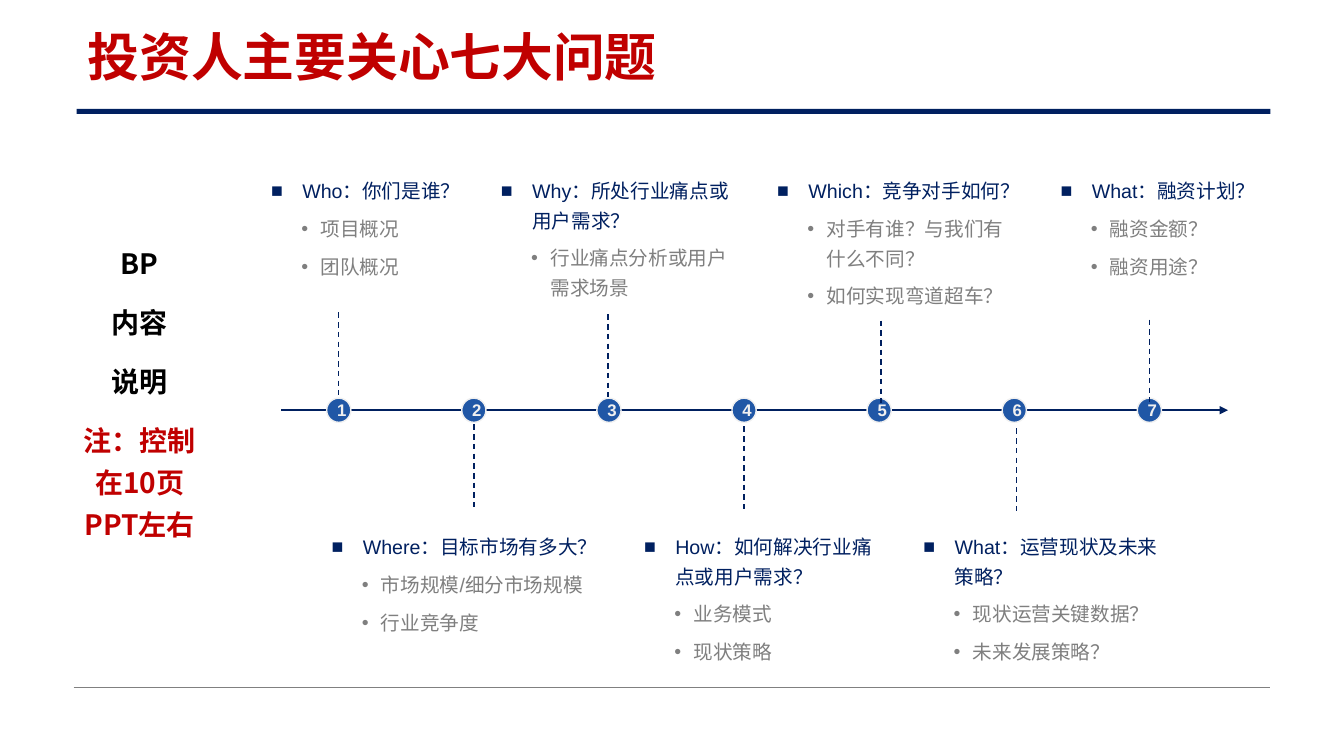
from lxml import etree
from pptx import Presentation
from pptx.dml.color import RGBColor
from pptx.enum.dml import MSO_LINE_DASH_STYLE as Dash
from pptx.enum.shapes import MSO_CONNECTOR as Connector, MSO_SHAPE as Shape
from pptx.enum.text import MSO_ANCHOR as Anchor, MSO_AUTO_SIZE as AutoSize, PP_ALIGN as Align
from pptx.oxml.ns import qn
from pptx.util import Inches, Pt

TITLE = "投资人主要关心七大问题"
SIDE_LABEL = ["BP", "内容", "说明", "注：控制在10页PPT左右"]
ABOVE, BELOW = 1.67, 5.2

# heading, answers, (left, top, width, height), (stem x, stem top)
QUESTIONS = [
    ("Who：你们是谁？", ["项目概况", "团队概况"],
     (2.59, ABOVE, 2.46, 1.14), (3.36, 3.1)),
    ("Where：目标市场有多大？", ["市场规模/细分市场规模", "行业竞争度"],
     (3.19, BELOW, 2.73, 1.14), (4.7, 4.21)),
    ("Why：所处行业痛点或用户需求？", ["行业痛点分析或用户需求场景"],
     (4.87, ABOVE, 2.59, 1.36), (6.03, 3.12)),
    ("How：如何解决行业痛点或用户需求？", ["业务模式", "现状策略"],
     (6.29, BELOW, 2.46, 1.45), (7.38, 4.23)),
    ("Which：竞争对手如何？", ["对手有谁？与我们有什么不同？", "如何实现弯道超车？"],
     (7.61, ABOVE, 2.63, 1.45), (8.74, 3.18)),
    ("What：运营现状及未来策略？", ["现状运营关键数据？", "未来发展策略？"],
     (9.06, BELOW, 2.63, 1.45), (10.08, 4.25)),
    ("What：融资计划？", ["融资金额？", "融资用途？"],
     (10.42, ABOVE, 2.09, 1.15), (11.4, 3.17)),
]
AXIS_Y, AXIS_START, AXIS_END = 4.07, 2.79, 12.18
DOT_SIZE, DOT_LEFT, DOT_STEP = 0.24, 3.24, 1.34
STEM_LENGTH = 0.82

THEME = {
    "navy": RGBColor.from_string("002060"), "red": RGBColor.from_string("C00000"),
    "blue": RGBColor.from_string("2057A6"), "pale": RGBColor.from_string("F0F0F0"),
    "gray": RGBColor.from_string("7F7F7F"), "rule": RGBColor.from_string("808080"),
    "black": RGBColor.from_string("000000"),
    "latin": "Arial", "asian": "Noto Sans CJK SC",
    "title": 37, "label": 20, "body": 14, "number": 12,
}

presentation = Presentation()
presentation.slide_width, presentation.slide_height = Inches(13.33), Inches(7.5)
slide = presentation.slides.add_slide(presentation.slide_layouts[6])


def style_paragraph(paragraph, size, color, bold=False, font="latin"):
    for run in paragraph.runs:
        run.font.name = THEME[font]
        run.font.size = Pt(THEME[size])
        run.font.bold = bold
        run.font.color.rgb = THEME[color]
        asian = etree.SubElement(run.font._element, qn("a:ea"))
        asian.set("typeface", THEME["asian"])


def set_spacing(paragraph, first):
    paragraph.line_spacing = 1.25
    paragraph.space_before = Pt(0 if first else 6)
    paragraph.space_after = Pt(6)


def set_bullet(paragraph, character, margin, indent):
    properties = paragraph._p.get_or_add_pPr()
    properties.set("marL", str(Inches(margin)))
    properties.set("indent", str(Inches(indent)))
    etree.SubElement(properties, qn("a:buFont")).set("typeface", THEME["latin"])
    etree.SubElement(properties, qn("a:buChar")).set("char", character)


def add_text(box, lines, anchor=Anchor.TOP):
    frame = slide.shapes.add_textbox(*map(Inches, box)).text_frame
    frame.word_wrap = True
    frame.vertical_anchor = anchor
    frame.text = "\n".join(lines)
    return frame


def add_line(x1, y1, x2, y2, color, width):
    line = slide.shapes.add_connector(Connector.STRAIGHT, *map(Inches, (x1, y1, x2, y2)))
    line.line.color.rgb = THEME[color]
    line.line.width = Pt(width)
    etree.SubElement(line._element.spPr, qn("a:effectLst"))
    return line


def add_filled(kind, box, color):
    shape = slide.shapes.add_shape(kind, *map(Inches, box))
    shape.shadow.inherit = False
    shape.fill.solid()
    shape.fill.fore_color.rgb = THEME[color]
    shape.line.fill.background()
    return shape


# Page rules and title
add_line(0.73, 6.82, 12.6, 6.82, "rule", 0.5)
add_filled(Shape.RECTANGLE, (0.76, 1.08, 11.84, 0.05), "navy")
title = add_text((0.77, 0.3, 10.29, 0.61), [TITLE], Anchor.BOTTOM).paragraphs[0]
title.line_spacing = 0.8
style_paragraph(title, "title", "red", bold=True)

# Side label, with the note in red
label = add_text((0.71, 2.22, 1.35, 3.29), SIDE_LABEL, Anchor.MIDDLE)
for index, paragraph in enumerate(label.paragraphs):
    paragraph.alignment = Align.CENTER
    set_spacing(paragraph, first=index == 0)
    color = "red" if index == len(SIDE_LABEL) - 1 else "black"
    style_paragraph(paragraph, "label", color, bold=True, font="asian")

# Timeline axis
axis = add_line(AXIS_START, AXIS_Y, AXIS_END, AXIS_Y, "navy", 1.5)
etree.SubElement(axis.line._get_or_add_ln(), qn("a:tailEnd")).set("type", "triangle")

# Numbered dots
for index in range(len(QUESTIONS)):
    dot = add_filled(Shape.OVAL, (DOT_LEFT + index * DOT_STEP, AXIS_Y - DOT_SIZE / 2,
                                  DOT_SIZE, DOT_SIZE), "blue")
    dot.line.color.rgb = THEME["pale"]
    dot.line.width = Pt(1)
    frame = dot.text_frame
    frame.word_wrap = False
    frame.margin_left = Inches(0.06)
    frame.margin_right = frame.margin_top = frame.margin_bottom = 0
    frame.vertical_anchor = Anchor.MIDDLE
    frame.text = str(index + 1)
    frame.paragraphs[0].alignment = Align.CENTER
    style_paragraph(frame.paragraphs[0], "number", "pale", bold=True)

# Questions and their dashed stems
for heading, answers, box, (stem_x, stem_top) in QUESTIONS:
    stem = add_line(stem_x, stem_top, stem_x, stem_top + STEM_LENGTH, "navy", 1)
    stem.line.dash_style = Dash.DASH
    frame = add_text(box, [heading, *answers])
    frame.auto_size = AutoSize.SHAPE_TO_FIT_TEXT
    for index, paragraph in enumerate(frame.paragraphs):
        is_heading = index == 0
        set_spacing(paragraph, first=True)
        set_bullet(paragraph, *(("■", 0.31, -0.31) if is_heading else ("•", 0.49, -0.19)))
        style_paragraph(paragraph, "body", "navy" if is_heading else "gray")

presentation.save("out.pptx")
